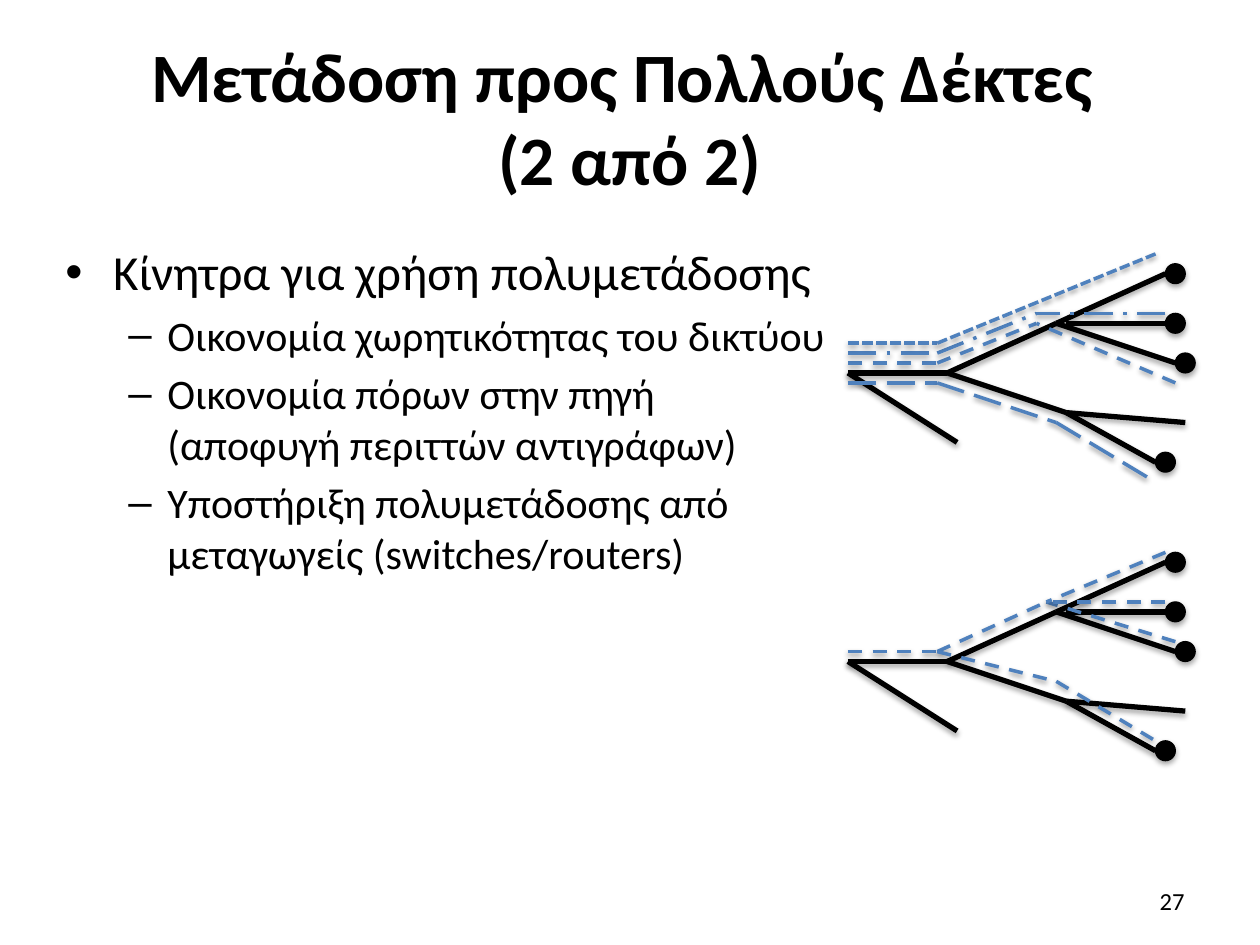
from itertools import pairwise
from lxml import etree
from pptx import Presentation
from pptx.dml.color import RGBColor
from pptx.enum.dml import MSO_LINE as Dash
from pptx.enum.shapes import MSO_CONNECTOR, MSO_SHAPE
from pptx.enum.text import MSO_ANCHOR, MSO_AUTO_SIZE, PP_ALIGN
from pptx.oxml import parse_xml
from pptx.oxml.ns import nsdecls, qn
from pptx.util import Cm, Inches, Pt

# Content
TITLE = ["Μετάδοση προς Πολλούς Δέκτες ", "(2 από 2)"]
BULLETS = [
    (0, "Κίνητρα για χρήση πολυμετάδοσης"),
    (1, "Οικονομία χωρητικότητας του δικτύου"),
    (1, "Οικονομία πόρων στην πηγή (αποφυγή περιττών αντιγράφων)"),
    (1, "Υποστήριξη πολυμετάδοσης από μεταγωγείς (switches/routers)"),
]
PAGE_NUMBER = "27"
# level: (bullet, size in points, left margin, hanging indent)
LEVELS = [("•", 28, 0.38, 0.38), ("–", 24, 0.81, 0.31)]

FONT, BLACK, BLUE = "Calibri", "000000", "4F81BD"
WIDTH, HEIGHT = 10, 7.5

# Network trees: points in grid units, measured from the source node
UNIT = Cm(0.2)
SOURCE_X = 6.73
BRANCHES = [
    [(0, 0), (10, 0), (21, -5), (32, -10)],
    [(10, 0), (22, 4), (34, 5)],
    [(21, -5), (33, -1)],
    [(22, 4), (31, 9)],
    [(22, -5), (32, -5)],
    [(0, 0), (11, 7)],
]
RECEIVERS = [(32, -10), (32, -5), (33, -1), (31, 9)]  # left edge, middle
UNICAST = [
    (Dash.DASH, [(0, -1), (9, -1), (19, -5)]),
    (Dash.DASH, [(33, 1), (19, -5)]),
    (Dash.LONG_DASH_DOT, [(0, -2), (9, -2), (19, -6)]),
    (Dash.LONG_DASH_DOT, [(32, -6), (19, -6)]),
    (Dash.SQUARE_DOT, [(0, -3), (9, -3), (31, -12)]),
    (Dash.LONG_DASH, [(0, 1), (9, 1), (21, 5), (31, 11)]),
]
MULTICAST = [
    (Dash.DASH, [(0, -1), (9, -1), (20, -6)]),
    (Dash.DASH, [(33, -2), (20, -6)]),
    (Dash.DASH, [(32, -6), (20, -6)]),
    (Dash.DASH, [(9, -1), (21, 2), (31, 8)]),
    (Dash.DASH, [(32, -11), (20, -6)]),
]
TREES = [(2.96, UNICAST), (5.25, MULTICAST)]  # source height, routes


def color(value):
    return RGBColor.from_string(value)


def place(shape, left, top, width, height):
    shape.left, shape.top = Inches(left), Inches(top)
    shape.width, shape.height = Inches(width), Inches(height)


def add_span(para, text, size, bold=False):
    span = para.add_run()
    span.text = text
    span.font.name, span.font.size, span.font.bold = FONT, Pt(size), bold
    span.font.color.rgb = color(BLACK)


def set_frame(frame, anchor):
    frame.word_wrap = True
    frame.auto_size = MSO_AUTO_SIZE.NONE
    frame.vertical_anchor = anchor


def add_shadow(shape, distance, alpha):
    shape._element.spPr.append(parse_xml(
        f'<a:effectLst {nsdecls("a")}><a:outerShdw blurRad="40000" dist="{distance}" '
        f'dir="5400000" rotWithShape="0"><a:srgbClr val="{BLACK}">'
        f'<a:alpha val="{alpha * 1000}"/></a:srgbClr></a:outerShdw></a:effectLst>'))


def add_bullet(para, mark, margin, hanging):
    props = para._p.get_or_add_pPr()
    props.set("marL", str(Inches(margin)))
    props.set("indent", str(-Inches(hanging)))
    etree.SubElement(props, qn("a:buFont")).set("typeface", "Arial")
    etree.SubElement(props, qn("a:buChar")).set("char", mark)


def add_path(group, source_y, points, hue, width, dash=None):
    spots = [(Inches(SOURCE_X) + x * UNIT, Inches(source_y) + y * UNIT) for x, y in points]
    for start, end in pairwise(spots):
        line = group.shapes.add_connector(MSO_CONNECTOR.STRAIGHT, *start, *end)
        line.line.color.rgb = color(hue)
        line.line.width = Pt(width)
        if dash:
            line.line.dash_style = dash
        add_shadow(line, *((20000, 38) if dash else (23000, 35)))


def add_tree(slide, source_y, routes):
    group = slide.shapes.add_group_shape()
    for points in BRANCHES:
        add_path(group, source_y, points, BLACK, 3)
    for x, y in RECEIVERS:
        dot = group.shapes.add_shape(
            MSO_SHAPE.OVAL, Inches(SOURCE_X) + x * UNIT,
            Inches(source_y) + (y - 1) * UNIT, 2 * UNIT, 2 * UNIT)
        dot.fill.solid()
        dot.fill.fore_color.rgb = color(BLACK)
        dot.line.color.rgb = color(BLACK)
        dot.line.width = Pt(0.75)
        add_shadow(dot, 23000, 35)
    for dash, points in routes:
        add_path(group, source_y, points, BLUE, 2, dash)


def main():
    deck = Presentation()
    deck.slide_width, deck.slide_height = Inches(WIDTH), Inches(HEIGHT)
    slide = deck.slides.add_slide(deck.slide_layouts[5])

    # Title
    title = slide.shapes.title
    place(title, 0.5, 0.3, 9, 1.25)
    set_frame(title.text_frame, MSO_ANCHOR.MIDDLE)
    para = title.text_frame.paragraphs[0]
    para.alignment = PP_ALIGN.CENTER
    for number, text in enumerate(TITLE):
        if number:
            para.add_line_break()
        add_span(para, text, 39.6, True)

    # Bullet list
    body = slide.shapes.add_textbox(0, 0, 0, 0)
    place(body, 0.42, 1.87, 6.25, 5.5)
    set_frame(body.text_frame, MSO_ANCHOR.TOP)
    for number, (level, text) in enumerate(BULLETS):
        mark, size, margin, hanging = LEVELS[level]
        para = body.text_frame.add_paragraph() if number else body.text_frame.paragraphs[0]
        para.level = level
        add_bullet(para, mark, margin, hanging)
        if number:
            para.space_before = Pt(size * 0.2)
        add_span(para, text, size)

    # Unicast tree above, multicast tree below
    for source_y, routes in TREES:
        add_tree(slide, source_y, routes)

    # Page number
    page = slide.shapes.add_textbox(0, 0, 0, 0)
    place(page, 7.17, 6.95, 2.33, 0.4)
    set_frame(page.text_frame, MSO_ANCHOR.MIDDLE)
    para = page.text_frame.paragraphs[0]
    para.alignment = PP_ALIGN.RIGHT
    add_span(para, PAGE_NUMBER, 14)

    deck.save("out.pptx")


if __name__ == "__main__":
    main()
